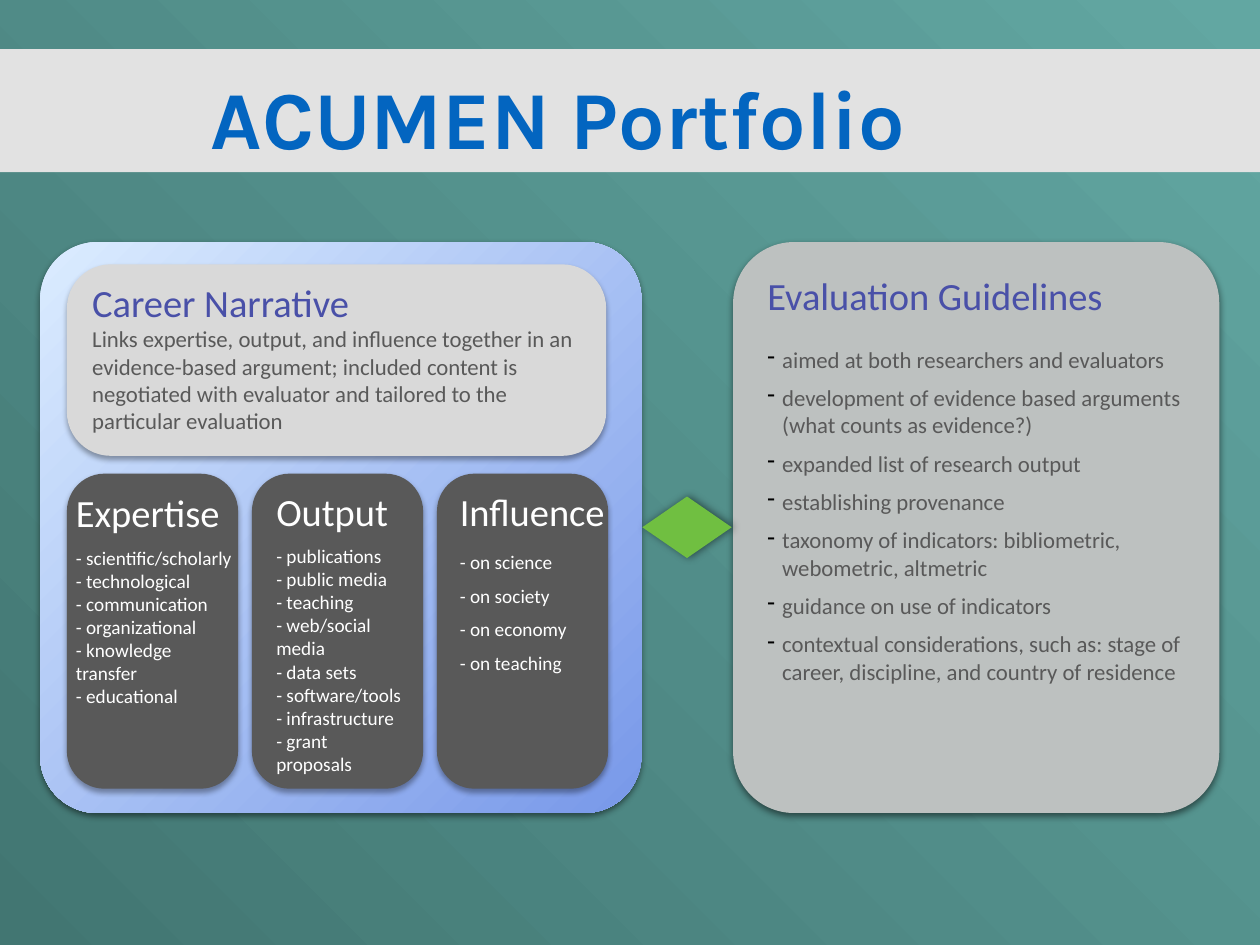
import pptx
import pptx.util
import pptx.dml.color
import pptx.enum.shapes
import pptx.enum.text
import pptx.oxml
import pptx.oxml.ns
from lxml import etree

Cm = pptx.util.Cm
Pt = pptx.util.Pt
RGBColor = pptx.dml.color.RGBColor
SHAPE = pptx.enum.shapes.MSO_SHAPE
qn = pptx.oxml.ns.qn

TEAL_LIGHT = RGBColor(0x62, 0xA7, 0xA2)
TEAL_DARK = RGBColor(0x42, 0x76, 0x72)
BAND_GREY = RGBColor(0xE2, 0xE2, 0xE2)
TITLE_BLUE = RGBColor(0x03, 0x65, 0xC0)
PANEL_LIGHT = RGBColor(0xDB, 0xEC, 0xFF)
PANEL_DARK = RGBColor(0x78, 0x98, 0xE9)
CARD_GREY = RGBColor(0xD9, 0xD9, 0xD9)
GUIDE_GREY = RGBColor(0xBD, 0xC1, 0xC0)
DARK_GREY = RGBColor(0x59, 0x59, 0x59)
HEADING_BLUE = RGBColor(0x49, 0x50, 0xA8)
GREEN = RGBColor(0x70, 0xBF, 0x41)
WHITE = RGBColor(0xFF, 0xFF, 0xFF)

# Shadows: opacity in percent, blur and distance in points, direction in degrees
PANEL_SHADOW = (50, 4, 2, 90)
CARD_SHADOW = (35, 3, 1.8, 90)
ARROW_SHADOW = (50, 5, 1, 0)

# Text left, top, width, then heading, items, space before the first and later items
PILLARS = [
    (1.4, 9.73, 3.42, "Expertise",
     ["- scientific/scholarly", "- technological", "- communication",
      "- organizational", "- knowledge transfer", "- educational"], 6, 0),
    (5.44, 9.7, 2.88, "Output",
     ["- publications", "- public media", "- teaching", "- web/social media",
      "- data sets", "- software/tools", "- infrastructure",
      "- grant proposals"], 6, 0),
    (9.14, 9.7, 3.53, "Influence",
     ["- on science", "- on society", "- on economy", "- on teaching"], 9.5, 6),
]
GUIDELINES = [
    "aimed at both researchers and evaluators",
    "development of evidence based arguments (what counts as evidence?)",
    "expanded list of research output",
    "establishing provenance",
    "taxonomy of indicators: bibliometric, webometric, altmetric",
    "guidance on use of indicators",
    "contextual considerations, such as: stage of career, discipline, "
    "and country of residence",
]


def set_gradient(fill, start, end):
    fill.gradient()
    for stop, color in zip(fill.gradient_stops, (start, end)):
        stop.color.rgb = color


def add_background(page):
    fill = page.background.fill
    set_gradient(fill, TEAL_LIGHT, TEAL_DARK)
    # Circles spreading from the top right corner
    linear = next(page.element.iter(qn("a:lin")))
    circle = etree.Element(qn("a:path"), path="circle")
    etree.SubElement(circle, qn("a:fillToRect"), l="100000", b="100000")
    linear.getparent().replace(linear, circle)


def add_shadow(shape, opacity, blur, distance, direction):
    effects = shape.element.spPr.find(qn("a:effectLst"))
    shadow = etree.SubElement(
        effects, qn("a:outerShdw"), blurRad=str(Pt(blur)), dist=str(Pt(distance)),
        dir=str(direction * 60000), rotWithShape="0")
    color = etree.SubElement(shadow, qn("a:srgbClr"), val="000000")
    etree.SubElement(color, qn("a:alpha"), val=str(opacity * 1000))


def add_block(shapes, kind, place, color, adjustments=(), shadow=None):
    shape = shapes.add_shape(kind, *map(Cm, place))
    for index, value in enumerate(adjustments):
        shape.adjustments[index] = value
    shape.fill.solid()
    shape.fill.fore_color.rgb = color
    shape.line.fill.background()
    shape.shadow.inherit = False
    if shadow:
        add_shadow(shape, *shadow)
    return shape


def add_text_box(shapes, place, inset):
    box = shapes.add_textbox(*map(Cm, place))
    frame = box.text_frame
    frame.word_wrap = True
    frame.margin_left = frame.margin_right = Cm(inset)
    frame.margin_top = frame.margin_bottom = Cm(inset)
    return frame


def style(para, text, size, color, name="Calibri", before=0):
    para.text = text
    para.font.size = Pt(size)
    para.font.name = name
    para.font.color.rgb = color
    if before:
        para.space_before = Pt(before)


def add_dash(para):
    props = para._p.get_or_add_pPr()
    props.set("marL", str(Cm(0.3)))
    props.set("indent", str(-Cm(0.3)))
    color = etree.SubElement(props, qn("a:buClr"))
    etree.SubElement(color, qn("a:srgbClr"), val="000000")
    etree.SubElement(props, qn("a:buChar"), char="-")


def add_title(page):
    add_block(page.shapes, SHAPE.RECTANGLE, (0, 0.99, 25.4, 2.48), BAND_GREY)
    frame = add_text_box(page.shapes, (4.17, 1.3, 17.42, 2.11), 0.08)
    frame.vertical_anchor = pptx.enum.text.MSO_ANCHOR.MIDDLE
    para = frame.paragraphs[0]
    style(para, "ACUMEN Portfolio", 47, TITLE_BLUE, "Karla")
    para.font.bold = True


def add_narrative(shapes):
    add_block(shapes, SHAPE.ROUNDED_RECTANGLE, (1.35, 5.33, 10.87, 3.86),
              CARD_GREY, [0.229], CARD_SHADOW)
    frame = add_text_box(shapes, (1.73, 5.49, 10.39, 3.3), 0.13)
    style(frame.paragraphs[0], "Career Narrative", 22, HEADING_BLUE)
    style(frame.add_paragraph(),
          "Links expertise, output, and influence together in an evidence-based "
          "argument; included content is negotiated with evaluator and tailored "
          "to the particular evaluation", 13, DARK_GREY)


def add_pillar(shapes, index, left, top, width, heading, items, first_gap, gap):
    add_block(shapes, SHAPE.ROUNDED_RECTANGLE, (1.35 + 3.73 * index, 9.55, 3.45, 6.35),
              DARK_GREY, [0.219], CARD_SHADOW)
    frame = add_text_box(shapes, (left, top, width, 6), 0.13)
    style(frame.paragraphs[0], heading, 22, WHITE)
    for number, item in enumerate(items):
        style(frame.add_paragraph(), item, 11, WHITE,
              before=gap if number else first_gap)


def add_portfolio(page):
    shapes = page.shapes.add_group_shape().shapes
    panel = add_block(shapes, SHAPE.ROUNDED_RECTANGLE, (0.81, 4.88, 12.12, 11.51),
                      PANEL_LIGHT, [0.1], PANEL_SHADOW)
    set_gradient(panel.fill, PANEL_LIGHT, PANEL_DARK)
    panel.fill.gradient_angle = 315
    add_narrative(shapes)
    for index, pillar in enumerate(PILLARS):
        add_pillar(shapes, index, *pillar)


def add_guidelines(page):
    add_block(page.shapes, SHAPE.ROUNDED_RECTANGLE, (14.78, 4.88, 9.8, 11.51),
              GUIDE_GREY, [0.125], PANEL_SHADOW)
    frame = add_text_box(page.shapes, (15.42, 5.44, 8.59, 10.82), 0.05)
    style(frame.paragraphs[0], "Evaluation Guidelines", 22, HEADING_BLUE)
    for number, guideline in enumerate(GUIDELINES):
        para = frame.add_paragraph()
        add_dash(para)
        style(para, guideline, 13, DARK_GREY, before=6.3 if number else 15.4)


def main():
    deck = pptx.Presentation()
    deck.slide_width, deck.slide_height = Cm(25.4), Cm(19.05)
    page = deck.slides.add_slide(deck.slide_layouts[6])
    add_background(page)
    add_title(page)
    add_portfolio(page)
    add_guidelines(page)
    # Link between portfolio and guidelines
    add_block(page.shapes, SHAPE.LEFT_RIGHT_ARROW, (12.95, 10.01, 1.8, 1.24),
              GREEN, [0.32, 0.752], ARROW_SHADOW)
    deck.save("out.pptx")


if __name__ == "__main__":
    main()
